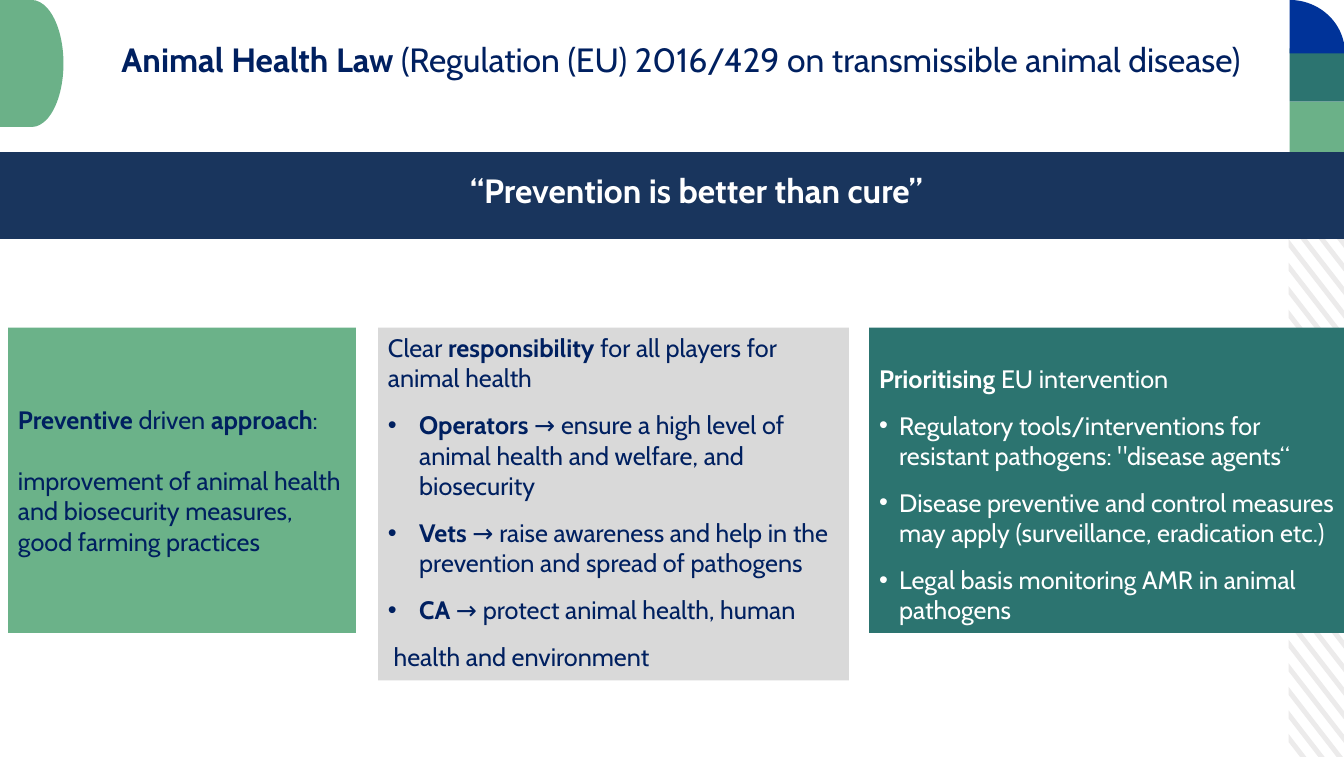
import math

from lxml import etree
from pptx import Presentation
from pptx.dml.color import RGBColor
from pptx.enum.shapes import MSO_SHAPE
from pptx.enum.text import MSO_ANCHOR, PP_ALIGN
from pptx.oxml.ns import qn
from pptx.util import Inches, Pt

RECTANGLE = MSO_SHAPE.RECTANGLE
HALF_ROUND = MSO_SHAPE.FLOWCHART_DELAY
TOP, MIDDLE = MSO_ANCHOR.TOP, MSO_ANCHOR.MIDDLE
LEFT, CENTER = PP_ALIGN.LEFT, PP_ALIGN.CENTER

FONT = "Cabin"
NAVY, WHITE = "002060", "FFFFFF"
GREEN, TEAL = "6BB188", "2C7470"

presentation = Presentation()
presentation.slide_width = Inches(13.33)
presentation.slide_height = Inches(7.51)
slide = presentation.slides.add_slide(presentation.slide_layouts[6])


def paint(shape, color):
    """Give a shape a plain fill without line or shadow."""
    shape.shadow.inherit = False
    shape.fill.solid()
    shape.fill.fore_color.rgb = RGBColor.from_string(color)
    shape.line.fill.background()


def write(shape, paragraphs, color, size, align=LEFT, anchor=TOP, top_inset=0.05):
    """Fill a shape with (indent, bulleted, space after, [(text, bold)]) paragraphs."""
    frame = shape.text_frame
    frame.word_wrap = True
    frame.vertical_anchor = anchor
    frame.margin_top = Inches(top_inset)
    for index, (indent, bulleted, space_after, runs) in enumerate(paragraphs):
        paragraph = frame.add_paragraph() if index else frame.paragraphs[0]
        paragraph.alignment = align
        paragraph.space_after = Pt(space_after)
        if bulleted:
            properties = paragraph._p.get_or_add_pPr()
            properties.set("marL", str(Inches(indent)))
            properties.set("indent", str(-Inches(indent)))
            etree.SubElement(properties, qn("a:buFont")).set("typeface", "Arial")
            etree.SubElement(properties, qn("a:buChar")).set("char", "•")
        for text, bold in runs:
            run = paragraph.add_run()
            run.text = text
            run.font.name = FONT
            run.font.size = Pt(size)
            run.font.bold = bold
            run.font.color.rgb = RGBColor.from_string(color)


# Diagonal stripes, clipped to the right-hand column
column_left, column_right = 12.78, 13.33
column_top, column_bottom = 1.54, 7.51
rise, pitch, thickness = 0.71, 0.2338, 0.08
slope = rise / (column_right - column_left)
contours = []
for number in range(-3, 25):
    stripe_top = 1.67 + number * pitch
    edges = []
    for edge_top in (stripe_top, stripe_top + thickness):
        ends = []
        for y in (edge_top, edge_top + rise):
            clipped = min(max(y, column_top), column_bottom)
            x = column_left + (clipped - edge_top) / slope
            ends.append((Inches(x), Inches(clipped)))
        edges.append(ends)
    upper, lower = edges
    contours.append(upper + lower[::-1])
builder = slide.shapes.build_freeform(*contours[0][0])
for number, contour in enumerate(contours):
    if number:
        builder.move_to(*contour[0])
    builder.add_line_segments(contour[1:], close=True)
paint(builder.convert_to_shape(), "ECEBEB")

# Corner ornaments
for shape_type, left, top, width, height, color in (
    (RECTANGLE, 12.79, 0.48, 0.55, 0.53, TEAL),
    (RECTANGLE, 12.79, 1.01, 0.55, 0.53, GREEN),
    (HALF_ROUND, 0, 0, 0.63, 1.26, GREEN),
):
    ornament = slide.shapes.add_shape(
        shape_type, Inches(left), Inches(top), Inches(width), Inches(height))
    paint(ornament, color)

quarter_left, quarter_bottom = 12.79, 0.53
quarter_arc = []
for step in range(25):
    angle = math.radians(90 * step / 24)
    quarter_arc.append((Inches(quarter_left + 0.55 * math.sin(angle)),
                        Inches(quarter_bottom - 0.53 * math.cos(angle))))
builder = slide.shapes.build_freeform(Inches(quarter_left), Inches(quarter_bottom))
builder.add_line_segments(quarter_arc, close=True)
paint(builder.convert_to_shape(), "003399")

# Title and banner
title = slide.shapes.add_textbox(Inches(0.67), Inches(0.34), Inches(12.17), Inches(0.58))
write(title, [(0, False, 0, [
    ("Animal Health Law ", True),
    ("(Regulation (EU) 2016/429 on transmissible animal disease)", False),
])], NAVY, 24, CENTER)

banner = slide.shapes.add_shape(RECTANGLE, 0, Inches(1.51), Inches(13.33), Inches(0.86))
paint(banner, "19355D")
motto = slide.shapes.add_textbox(Inches(0.65), Inches(1.64), Inches(12.51), Inches(0.5))
write(motto, [(0, False, 0, [("“Prevention is better than cure”", True)])],
      WHITE, 24, CENTER)

# Three pillars
responsibility = [
    (0, False, 12, [("Clear ", False), ("responsibility", True),
                    (" for all players for animal health", False)]),
    (0.31, True, 12, [("Operators ", True),
                      ("→ ensure a high level of animal health and welfare, "
                       "and biosecurity", False)]),
    (0.31, True, 12, [("Vets ", True),
                      ("→ raise awareness and help in the prevention and spread "
                       "of pathogens", False)]),
    (0.31, True, 12, [("CA ", True), ("→ protect animal health, human", False)]),
    (0, False, 12, [(" health and environment", False)]),
]
prioritising = [
    (0, False, 12, [("Prioritising ", True), ("EU intervention", False)]),
    (0.2, True, 12, [("Regulatory tools/interventions for resistant pathogens: "
                      "\"disease agents“", False)]),
    (0.2, True, 12, [("Disease preventive and control measures may apply "
                      "(surveillance, eradication etc.)", False)]),
    (0.2, True, 12, [("Legal basis monitoring AMR in animal pathogens", False)]),
]
prevention = [
    (0, False, 22, [("Preventive ", True), ("driven ", False),
                    ("approach", True), (":", False)]),
    (0, False, 0, [("improvement of animal health and biosecurity measures, "
                    "good farming practices", False)]),
]
for left, width, height, fill, color, anchor, top_inset, paragraphs in (
    (3.75, 4.67, 3.5, "D9D9D9", NAVY, TOP, 0.05, responsibility),
    (8.62, 4.71, 3.03, TEAL, WHITE, TOP, 0.35, prioritising),
    (0.08, 3.45, 3.03, "6BB289", NAVY, MIDDLE, 0.05, prevention),
):
    pillar = slide.shapes.add_shape(
        RECTANGLE, Inches(left), Inches(3.25), Inches(width), Inches(height))
    paint(pillar, fill)
    write(pillar, paragraphs, color, 18, anchor=anchor, top_inset=top_inset)

presentation.save("out.pptx")
